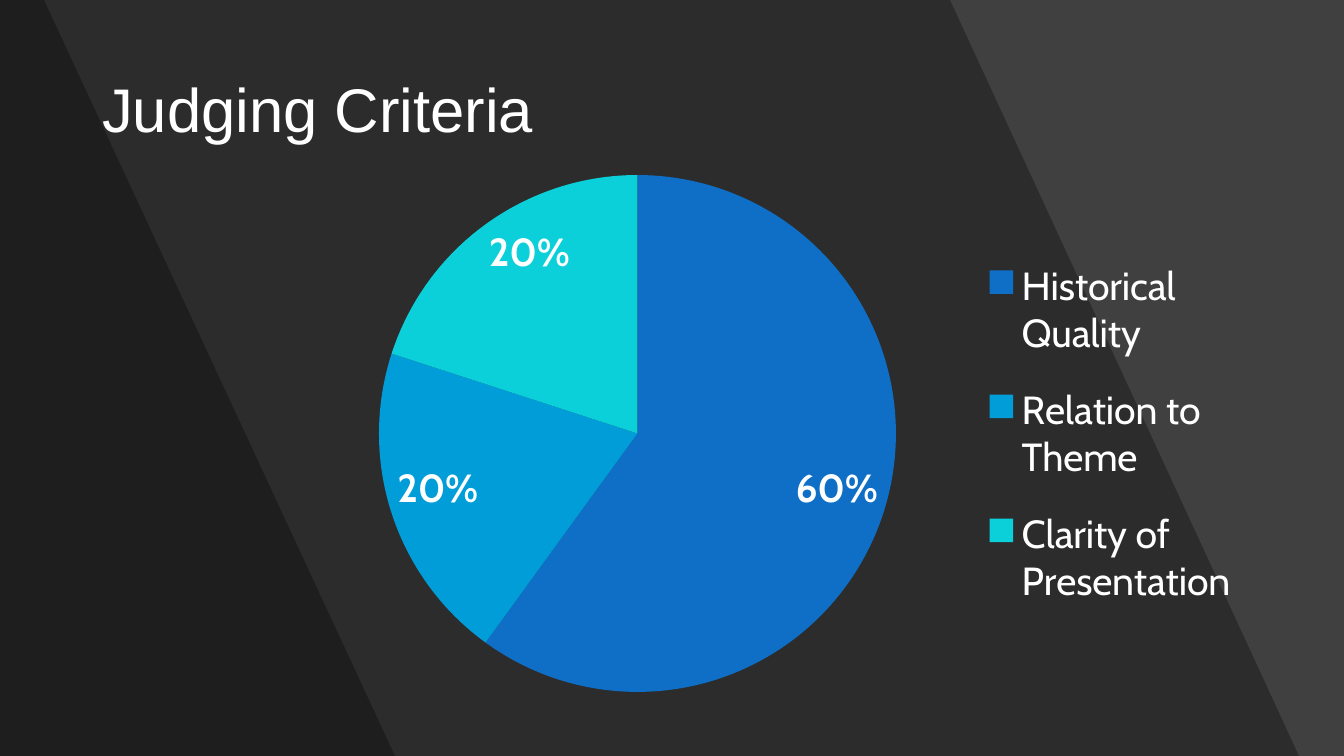
from lxml import etree
from pptx import Presentation
from pptx import util as u
from pptx.chart.data import CategoryChartData
from pptx.dml.color import RGBColor
from pptx.enum import chart as charts, text
from pptx.oxml import ns

TITLE = "Judging Criteria"
CRITERIA = [
    ("Historical Quality", 60, "quality"),
    ("Relation to Theme", 20, "theme"),
    ("Clarity of Presentation", 20, "clarity"),
]
COLORS = {
    "background": "404040", "shade": "000000", "text": "FFFFFF",
    "quality": "0F6FC6", "theme": "009DD9", "clarity": "0BD0D9",
}
WIDTH, HEIGHT = 1344, 756
SHADES = [(950, 1299), (44, 395)]  # right edge at top and at bottom
SHADE_ALPHA = 30
TITLE_BOX = (92, 40, 1160, 146)
CHART_BOX = (92, 175, 1191, 517)
PIE_BOX = (379, 175, 517, 517)
LEGEND_BOX = (975, 233, 270, 402)
SCALE = u.Inches(7.5) / HEIGHT


def px(length):
    return u.Emu(round(length * SCALE))


def color(name):
    return RGBColor.from_string(COLORS[name])


def paint(fill, name):
    fill.solid()
    fill.fore_color.rgb = color(name)


def style_font(font, size, name="Cabin", bold=False):
    font.size, font.name, font.bold = u.Pt(size), name, bold
    font.color.rgb = color("text")


def write(shape, content, size, name, line_spacing=0.9):
    frame = shape.text_frame
    frame.word_wrap = True
    frame.vertical_anchor = text.MSO_ANCHOR.MIDDLE
    paragraph = frame.paragraphs[0]
    paragraph.alignment = text.PP_ALIGN.LEFT
    paragraph.line_spacing = line_spacing
    run = paragraph.add_run()
    run.text = content
    style_font(run.font, size, name)


def add_shade(slide, top, bottom):
    builder = slide.shapes.build_freeform(0, 0, scale=SCALE)
    builder.add_line_segments([(top, 0), (bottom, HEIGHT), (0, HEIGHT)], close=True)
    shape = builder.convert_to_shape()
    shape.shadow.inherit = False
    shape.line.fill.background()
    paint(shape.fill, "shade")
    rgb = shape.fill._xPr.find(".//" + ns.qn("a:srgbClr"))
    etree.SubElement(rgb, ns.qn("a:alpha"), val=str(SHADE_ALPHA * 1000))


def place(element, box, inner=False):
    """Give a plot area or legend a fixed place within the chart."""
    for old in element.findall(ns.qn("c:layout")):
        element.remove(old)
    layout = etree.Element(ns.qn("c:layout"))
    manual = etree.SubElement(layout, ns.qn("c:manualLayout"))
    left, top, width, height = CHART_BOX
    settings = [("layoutTarget", "inner")] if inner else []
    settings += [
        ("xMode", "edge"), ("yMode", "edge"),
        ("x", (box[0] - left) / width), ("y", (box[1] - top) / height),
        ("w", box[2] / width), ("h", box[3] / height),
    ]
    for tag, value in settings:
        etree.SubElement(manual, ns.qn("c:" + tag), val=str(value))
    position = element.find(ns.qn("c:legendPos"))
    if position is None:
        element.insert(0, layout)
    else:
        position.addnext(layout)


def add_pie(slide):
    data = CategoryChartData()
    data.categories = [label for label, _, _ in CRITERIA]
    data.add_series("Series 1", [value for _, value, _ in CRITERIA])
    frame = slide.shapes.add_chart(
        charts.XL_CHART_TYPE.PIE, *map(px, CHART_BOX), data)
    chart = frame.chart
    chart.has_title = False
    style_font(chart.font, 10, "Calibri")

    plot = chart.plots[0]
    plot.vary_by_categories = True
    for index, (_, _, name) in enumerate(CRITERIA):
        point = plot.series[0].points[index]
        paint(point.format.fill, name)
        point.format.line.fill.background()
    plot.has_data_labels = True
    labels = plot.data_labels
    labels.show_percentage, labels.show_value = True, False
    labels.number_format, labels.number_format_is_linked = "0%", False
    labels.position = charts.XL_LABEL_POSITION.INSIDE_END
    style_font(labels.font, 28, bold=True)

    chart.has_legend = True
    legend = chart.legend
    legend.position = charts.XL_LEGEND_POSITION.RIGHT
    legend.include_in_layout = False
    style_font(legend.font, 28)
    place(legend._element, LEGEND_BOX)
    place(chart._chartSpace.chart.plotArea, PIE_BOX, inner=True)


def main():
    presentation = Presentation()
    presentation.slide_width, presentation.slide_height = px(WIDTH), px(HEIGHT)
    slide = presentation.slides.add_slide(presentation.slide_layouts[5])
    paint(slide.background.fill, "background")
    for top, bottom in SHADES:
        add_shade(slide, top, bottom)
    title = slide.shapes.title
    title.left, title.top, title.width, title.height = map(px, TITLE_BOX)
    write(title, TITLE, 44, "Arial")
    slide.shapes._spTree.append(title._element)  # in front of the shades
    add_pie(slide)
    presentation.save("out.pptx")


if __name__ == "__main__":
    main()
